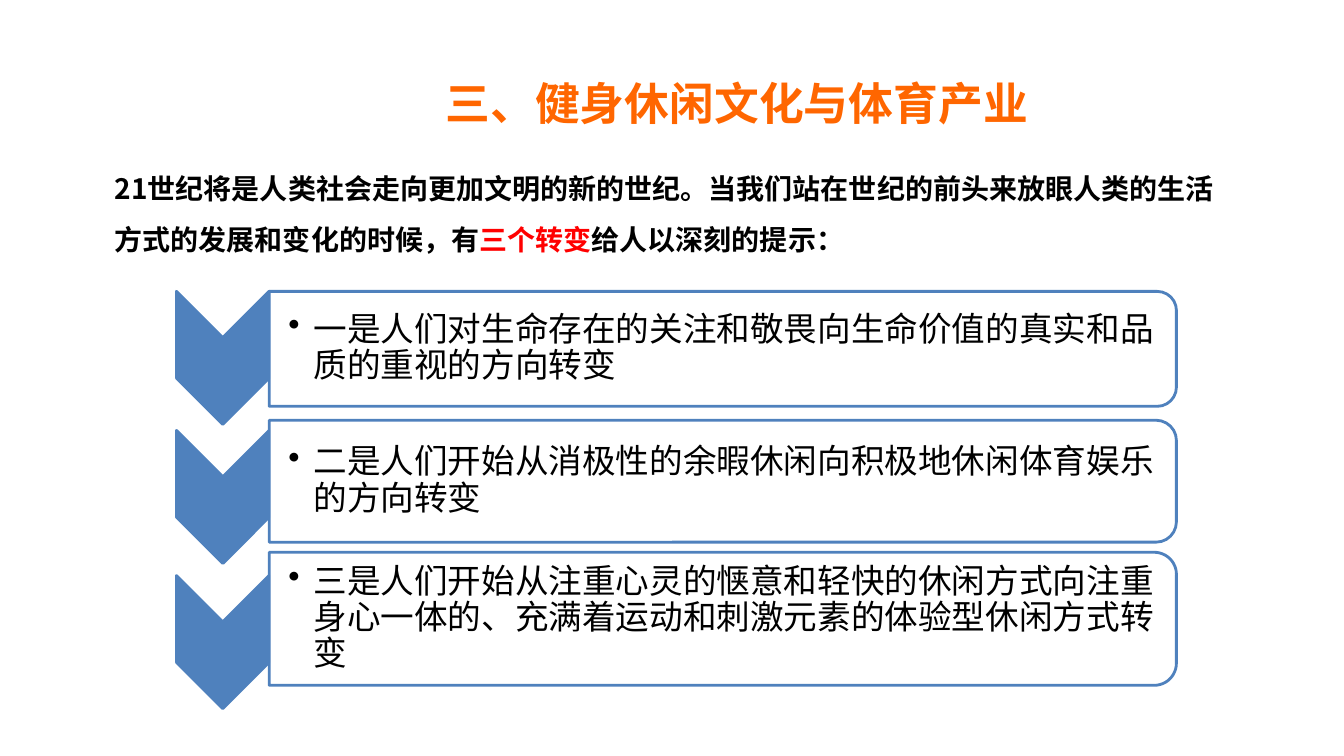
from dataclasses import dataclass

from lxml.etree import SubElement
from pptx import Presentation
from pptx.dml.color import RGBColor
from pptx.enum.shapes import MSO_SHAPE
from pptx.enum.text import MSO_ANCHOR, MSO_AUTO_SIZE
from pptx.oxml.ns import qn
from pptx.util import Inches, Pt


@dataclass(frozen=True)
class Theme:
    orange: str = "FF6600"
    red: str = "FF0000"
    black: str = "000000"
    blue: str = "4F81BD"
    white: str = "FFFFFF"
    heading_font: str = "Noto Sans CJK SC"
    card_font: str = "Noto Sans CJK JP"
    title_size: int = 32
    intro_size: int = 20
    card_size: int = 24
    outline: int = 2


THEME = Theme()
WIDTH, HEIGHT = Inches(13.333), Inches(7.5)

# Shares of the slide, in percent of its width (x) and height (y)
CHEVRON_X, CHEVRON_W, CHEVRON_H = 16.58, 6.9, 17.6
CARD_LEFT, CARD_W = 20.03, 67.5
CARD_TEXT_W, CARD_TEXT_TRIM = 67.05, 1.5

# Chevron centre, card centre, card height, wording
CHANGES = [
    (47.33, 46.15, 15.2,
     "一是人们对生命存在的关注和敬畏向生命价值的真实和品质的重视的方向转变"),
    (65.73, 63.65, 16.13,
     "二是人们开始从消极性的余暇休闲向积极地休闲体育娱乐的方向转变"),
    (84.93, 81.85, 17.6,
     "三是人们开始从注重心灵的惬意和轻快的休闲方式向注重身心一体的、"
     "充满着运动和刺激元素的体验型休闲方式转变"),
]


def across(share):
    return round(WIDTH * share / 100)


def down(share):
    return round(HEIGHT * share / 100)


def set_format(target, values):
    for name, value in values.items():
        setattr(target, name, value)


def add_run(paragraph, words, size, typeface, color, bold=False):
    run = paragraph.add_run()
    run.text = words
    set_format(run.font, {"size": Pt(size), "name": typeface, "bold": bold})
    run.font.color.rgb = RGBColor.from_string(color)
    SubElement(run.font._element, qn("a:ea"), typeface=typeface)


def add_text(slide, left, top, width, height, frame_format):
    box = slide.shapes.add_textbox(
        across(left), down(top), across(width), down(height))
    set_format(box.text_frame, {"word_wrap": True, **frame_format})
    return box.text_frame.paragraphs[0]


def add_turned_shape(slide, kind, center_x, center_y, width, height, color):
    """Place a shape turned by 90 degrees; width and height are as seen."""
    length, depth = down(height), across(width)
    shape = slide.shapes.add_shape(
        kind, across(center_x) - length // 2, down(center_y) - depth // 2,
        length, depth)
    shape.rotation = 90
    shape.shadow.inherit = False
    shape.fill.solid()
    shape.fill.fore_color.rgb = RGBColor.from_string(color)
    shape.line.color.rgb = RGBColor.from_string(THEME.blue)
    shape.line.width = Pt(THEME.outline)
    return shape


def add_bullet(paragraph):
    properties = paragraph._p.get_or_add_pPr()
    properties.set("marL", str(Inches(0.25)))
    properties.set("indent", str(-Inches(0.25)))
    SubElement(properties, qn("a:buChar"), char="•")


def add_change(slide, chevron_y, card_y, card_h, words):
    add_turned_shape(slide, MSO_SHAPE.CHEVRON, CHEVRON_X, chevron_y,
                     CHEVRON_W, CHEVRON_H, THEME.blue)
    card = add_turned_shape(slide, MSO_SHAPE.ROUND_2_SAME_RECTANGLE,
                            CARD_LEFT + CARD_W / 2, card_y,
                            CARD_W, card_h, THEME.white)
    tint = card.fill._xPr.find(".//" + qn("a:srgbClr"))
    SubElement(tint, qn("a:alpha"), val="90000")

    # Card wording
    text_h = card_h - CARD_TEXT_TRIM
    paragraph = add_text(
        slide, CARD_LEFT, card_y - text_h / 2, CARD_TEXT_W, text_h,
        {"vertical_anchor": MSO_ANCHOR.MIDDLE, "margin_left": Inches(0.19),
         "margin_right": Inches(0.02), "margin_top": Inches(0.02),
         "margin_bottom": Inches(0.02)})
    add_bullet(paragraph)
    set_format(paragraph, {"line_spacing": 0.9, "space_after": Pt(3.6)})
    add_run(paragraph, words, THEME.card_size, THEME.card_font, THEME.black)


def main():
    deck = Presentation()
    set_format(deck, {"slide_width": WIDTH, "slide_height": HEIGHT})
    slide = deck.slides.add_slide(deck.slide_layouts[6])
    growing = {"auto_size": MSO_AUTO_SIZE.SHAPE_TO_FIT_TEXT}

    # Title
    title = add_text(slide, 32.4, 9.33, 51.83, 8.53, growing)
    add_run(title, "三、健身休闲文化与体育产业", THEME.title_size,
            THEME.heading_font, THEME.orange, True)

    # Introduction
    intro = add_text(slide, 7.8, 19.87, 84.38, 14, growing)
    intro.line_spacing = 1.5
    for words, color in [
        ("21世纪将是人类社会走向更加文明的新的世纪。当我们站在世纪的前头来"
         "放眼人类的生活方式的发展和变化的时候，有", THEME.black),
        ("三个转变", THEME.red),
        ("给人以深刻的提示：", THEME.black),
    ]:
        add_run(intro, words, THEME.intro_size, THEME.heading_font, color, True)

    # Three changes
    for change in CHANGES:
        add_change(slide, *change)

    deck.save("out.pptx")


if __name__ == "__main__":
    main()
